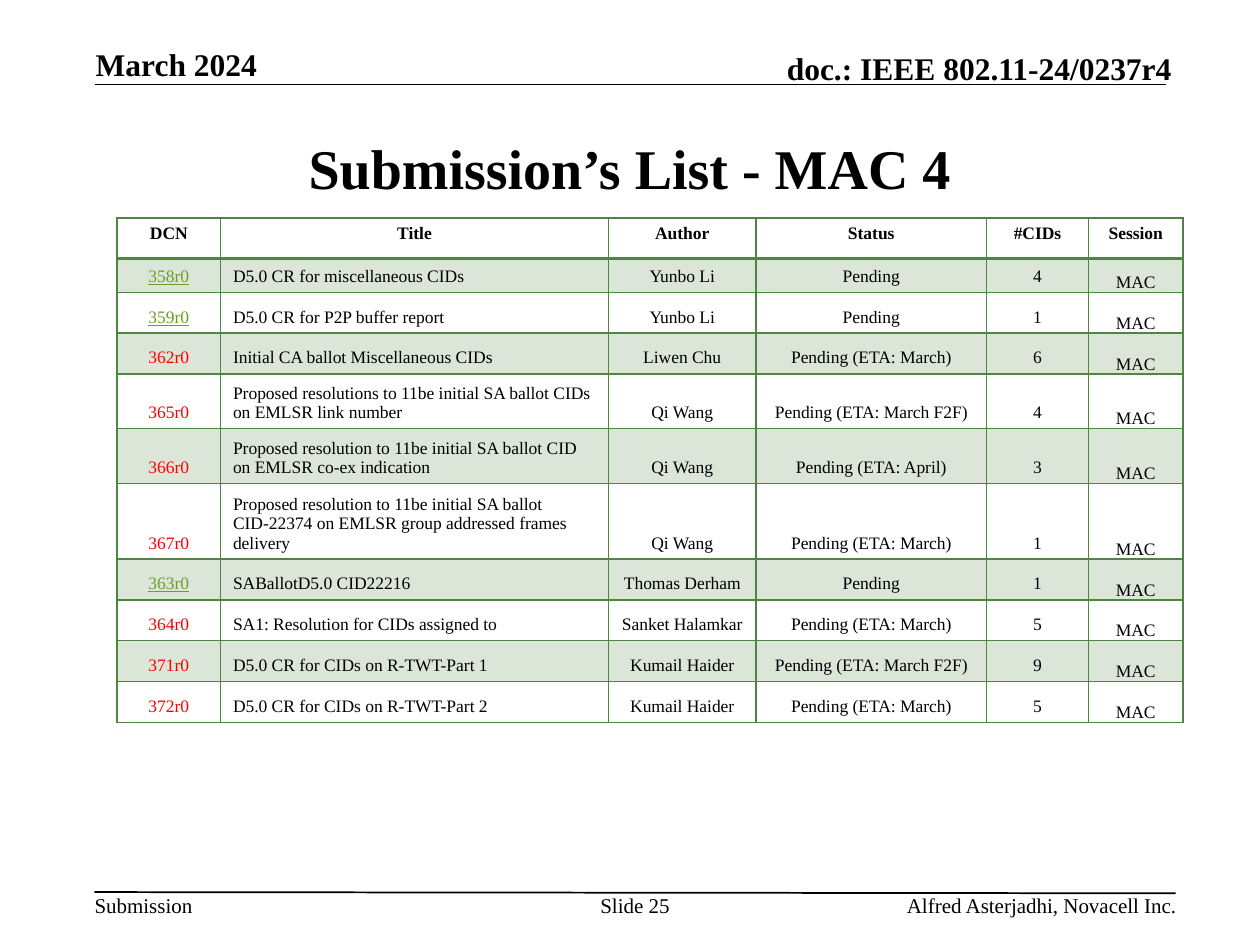
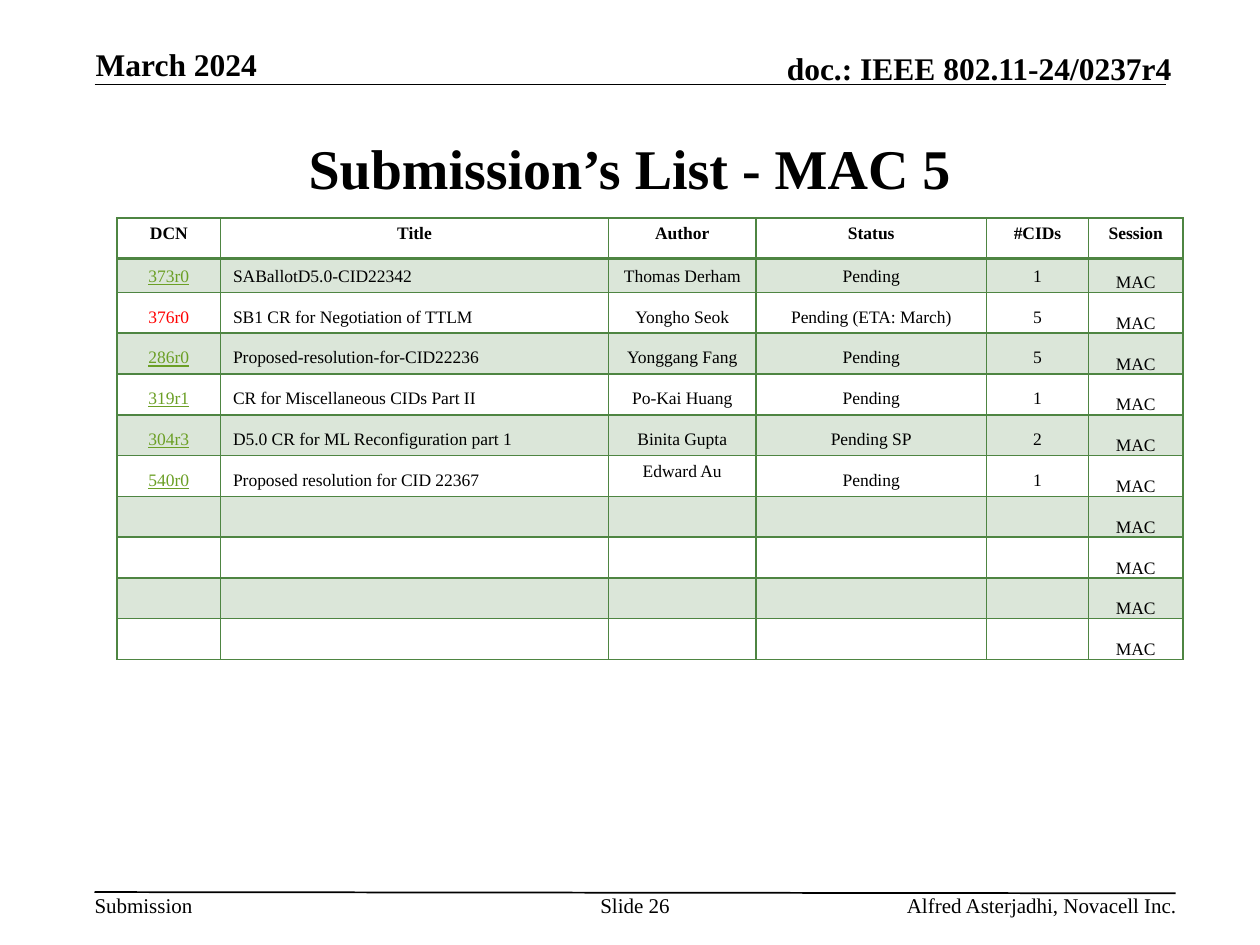
from typing import NamedTuple

from lxml.etree import SubElement
from pptx import Presentation
from pptx.dml.color import RGBColor
from pptx.enum.shapes import MSO_CONNECTOR
from pptx.enum.text import MSO_ANCHOR as ANCHOR, PP_ALIGN as ALIGN
from pptx.oxml.ns import qn
from pptx.util import Inches, Pt

BLACK = RGBColor(0x00, 0x00, 0x00)
WHITE = RGBColor(0xFF, 0xFF, 0xFF)
GREEN = RGBColor(0x4E, 0x85, 0x42)
LINK_GREEN = RGBColor(0x6B, 0x9F, 0x25)
RED = RGBColor(0xFF, 0x00, 0x00)
FONT = "Times New Roman"
CELL_SIZE = Pt(10)
BAND_ALPHA = 20

HEADERS = ["DCN", "Title", "Author", "Status", "#CIDs", "Session"]
COL_WIDTHS = [0.82, 3.08, 1.17, 1.83, 0.81, 0.75]
TITLE_COL, AUTHOR_COL = HEADERS.index("Title"), HEADERS.index("Author")
SESSION_COL = HEADERS.index("Session")
BODY_ROWS = 10
ROW_HEIGHT = Inches(3.24) // 10
FIRST_BODY_HEIGHT = Inches(0.25)


class Label(NamedTuple):
    """A line of text in a box; lengths in inches, size in points."""
    text: str
    left: float
    top: float
    width: float
    height: float
    size: int = 12
    bold: bool = False
    align: ALIGN = ALIGN.LEFT
    anchor: ANCHOR = ANCHOR.TOP
    wrap: bool = True


class Rule(NamedTuple):
    """A thin line across the page, in inches."""
    x1: float
    y1: float
    x2: float
    y2: float


class Submission(NamedTuple):
    """One row of a submission list."""
    dcn: str
    title: str
    author: str
    status: str
    cids: str
    posted: bool = True
    author_anchor: ANCHOR = ANCHOR.BOTTOM


class ListPage(NamedTuple):
    """One slide with its submission list."""
    title: str
    number: int
    submissions: list[Submission]


RULES = [Rule(0.75, 0.67, 9.25, 0.67), Rule(0.75, 7.08, 9.33, 7.09)]
SHARED_LABELS = [
    Label("March 2024", 0.76, 0.36, 2.05, 0.3, 18, True, anchor=ANCHOR.BOTTOM),
    Label("doc.: IEEE 802.11-24/0237r4", 5.47, 0.39, 3.83, 0.3, 18, True,
          ALIGN.RIGHT, ANCHOR.BOTTOM),
    Label("Submission", 0.75, 7.08, 0.78, 0.2, wrap=False),
    Label("Alfred Asterjadhi, Novacell Inc.", 5.86, 7.08, 3.48, 0.2,
          align=ALIGN.RIGHT),
]
PAGES = [
    ListPage("Submission’s List - MAC 4", 25, [
        Submission("358r0", "D5.0 CR for miscellaneous CIDs", "Yunbo Li",
                   "Pending", "4"),
        Submission("359r0", "D5.0 CR for P2P buffer report", "Yunbo Li",
                   "Pending", "1"),
        Submission("362r0", "Initial CA ballot Miscellaneous CIDs",
                   "Liwen Chu", "Pending (ETA: March)", "6", False),
        Submission("365r0", "Proposed resolutions to 11be initial SA ballot "
                   "CIDs on EMLSR link number",
                   "Qi Wang", "Pending (ETA: March F2F)", "4", False),
        Submission("366r0", "Proposed resolution to 11be initial SA ballot "
                   "CID on EMLSR co-ex indication",
                   "Qi Wang", "Pending (ETA: April)", "3", False),
        Submission("367r0", "Proposed resolution to 11be initial SA ballot "
                   "CID-22374 on EMLSR group addressed frames delivery",
                   "Qi Wang", "Pending (ETA: March)", "1", False),
        Submission("363r0", "SABallotD5.0 CID22216", "Thomas Derham",
                   "Pending", "1"),
        Submission("364r0", "SA1: Resolution for CIDs assigned to",
                   "Sanket Halamkar", "Pending (ETA: March)", "5", False),
        Submission("371r0", "D5.0 CR for CIDs on R-TWT-Part 1",
                   "Kumail Haider", "Pending (ETA: March F2F)", "9", False),
        Submission("372r0", "D5.0 CR for CIDs on R-TWT-Part 2",
                   "Kumail Haider", "Pending (ETA: March)", "5", False),
    ]),
    ListPage("Submission’s List - MAC 5", 26, [
        Submission("373r0", "SABallotD5.0-CID22342", "Thomas Derham",
                   "Pending", "1"),
        Submission("376r0", "SB1 CR for Negotiation of TTLM", "Yongho Seok",
                   "Pending (ETA: March)", "5", False),
        Submission("286r0", "Proposed-resolution-for-CID22236",
                   "Yonggang Fang", "Pending", "5"),
        Submission("319r1", "CR for Miscellaneous CIDs Part II",
                   "Po-Kai Huang", "Pending", "1"),
        Submission("304r3", "D5.0 CR for ML Reconfiguration part 1",
                   "Binita Gupta", "Pending SP", "2"),
        Submission("540r0", "Proposed resolution for CID 22367", "Edward Au",
                   "Pending", "1", author_anchor=ANCHOR.TOP),
    ]),
]


def style_font(font, size: Pt, bold: bool = False,
               color: RGBColor = BLACK) -> None:
    """Apply the deck's font to a run."""
    font.name, font.size, font.bold = FONT, size, bold
    font.color.rgb = color


def add_label(slide, label: Label) -> None:
    """Draw a text box without insets."""
    box = slide.shapes.add_textbox(Inches(label.left), Inches(label.top),
                                   Inches(label.width), Inches(label.height))
    tf = box.text_frame
    tf.margin_left = tf.margin_right = tf.margin_top = tf.margin_bottom = 0
    tf.word_wrap, tf.vertical_anchor = label.wrap, label.anchor
    tf.text = label.text
    p = tf.paragraphs[0]
    p.alignment = label.align
    style_font(p.runs[0].font, Pt(label.size), label.bold)


def add_rule(slide, rule: Rule) -> None:
    """Draw a black one-point line."""
    line = slide.shapes.add_connector(MSO_CONNECTOR.STRAIGHT,
                                      *(Inches(v) for v in rule))
    line.line.color.rgb, line.line.width = BLACK, Pt(1)
    SubElement(line._element.spPr, qn("a:effectLst"))


def set_borders(cell, top: int, bottom: int) -> None:
    """Outline a cell in green, with widths in points."""
    tc_pr = cell._tc.get_or_add_tcPr()
    for side, width in (("L", 1), ("R", 1), ("T", top), ("B", bottom)):
        ln = SubElement(tc_pr, qn(f"a:ln{side}"), w=str(Pt(width)))
        fill = SubElement(ln, qn("a:solidFill"))
        SubElement(fill, qn("a:srgbClr"), val=str(GREEN))


def fill_cell(cell, banded: bool) -> None:
    """Fill a cell white, or with translucent green in a band."""
    cell.fill.solid()
    cell.fill.fore_color.rgb = GREEN if banded else WHITE
    if banded:
        color = cell._tc.tcPr.find(qn("a:solidFill")).find(qn("a:srgbClr"))
        SubElement(color, qn("a:alpha"), val=str(BAND_ALPHA * 1000))


def write_cell(cell, text: str, align: ALIGN, anchor: ANCHOR,
               bold: bool = False, color: RGBColor = BLACK) -> None:
    """Write a cell's text, keeping empty cells at the same text size."""
    cell.vertical_anchor = anchor
    p = cell.text_frame.paragraphs[0]
    p.text, p.alignment = text, align
    for r in p.runs:
        style_font(r.font, CELL_SIZE, bold, color)
        r.font.underline = color == LINK_GREEN
    if not text:
        SubElement(p._p, qn("a:endParaRPr"), sz=str(int(CELL_SIZE.pt * 100)))


def add_submission_table(slide, submissions: list[Submission]) -> None:
    """Draw a list with a heading row and ten body rows."""
    rows = BODY_ROWS + 1
    table = slide.shapes.add_table(
        rows, len(HEADERS), Inches(0.93), Inches(1.73),
        Inches(sum(COL_WIDTHS)), ROW_HEIGHT * rows).table
    table.first_row = table.horz_banding = False
    for column, width in zip(table.columns, COL_WIDTHS):
        column.width = Inches(width)
    for row in table.rows:
        row.height = ROW_HEIGHT
    table.rows[1].height = FIRST_BODY_HEIGHT

    for i, row in enumerate(table.rows):
        for cell in row.cells:
            set_borders(cell, 2 if i == 1 else 1, 2 if i == 0 else 1)
            fill_cell(cell, i % 2 == 1)
    for col, header in enumerate(HEADERS):
        write_cell(table.cell(0, col), header, ALIGN.CENTER, ANCHOR.TOP, True)

    blanks = [Submission("", "", "", "", "")] * (BODY_ROWS - len(submissions))
    for i, sub in enumerate(submissions + blanks, start=1):
        for col, text in enumerate([*sub[:SESSION_COL], "MAC"]):
            color = BLACK if col else LINK_GREEN if sub.posted else RED
            align = ALIGN.LEFT if col == TITLE_COL else ALIGN.CENTER
            anchor = sub.author_anchor if col == AUTHOR_COL else ANCHOR.BOTTOM
            write_cell(table.cell(i, col), text, align, anchor, color=color)
        session = table.cell(i, SESSION_COL)
        session.margin_left = session.margin_right = 0
        session.margin_top = session.margin_bottom = 0


def add_list_page(prs, page: ListPage) -> None:
    """Add a slide with its header, footer, title and table."""
    s = prs.slides.add_slide(prs.slide_layouts[6])
    for rule in RULES:
        add_rule(s, rule)
    title = Label(page.title, 0.75, 0.75, 8.5, 1.16, 32, True,
                  ALIGN.CENTER, ANCHOR.MIDDLE)
    number = Label(f"Slide {page.number}", 4.75, 7.08, 0.58, 0.4,
                   align=ALIGN.CENTER)
    for label in [*SHARED_LABELS, title, number]:
        add_label(s, label)
    add_submission_table(s, page.submissions)


def main() -> None:
    """Build and save the deck."""
    prs = Presentation()
    prs.slide_width, prs.slide_height = Inches(10), Inches(7.5)
    for page in PAGES:
        add_list_page(prs, page)
    prs.save("out.pptx")


if __name__ == "__main__":
    main()
